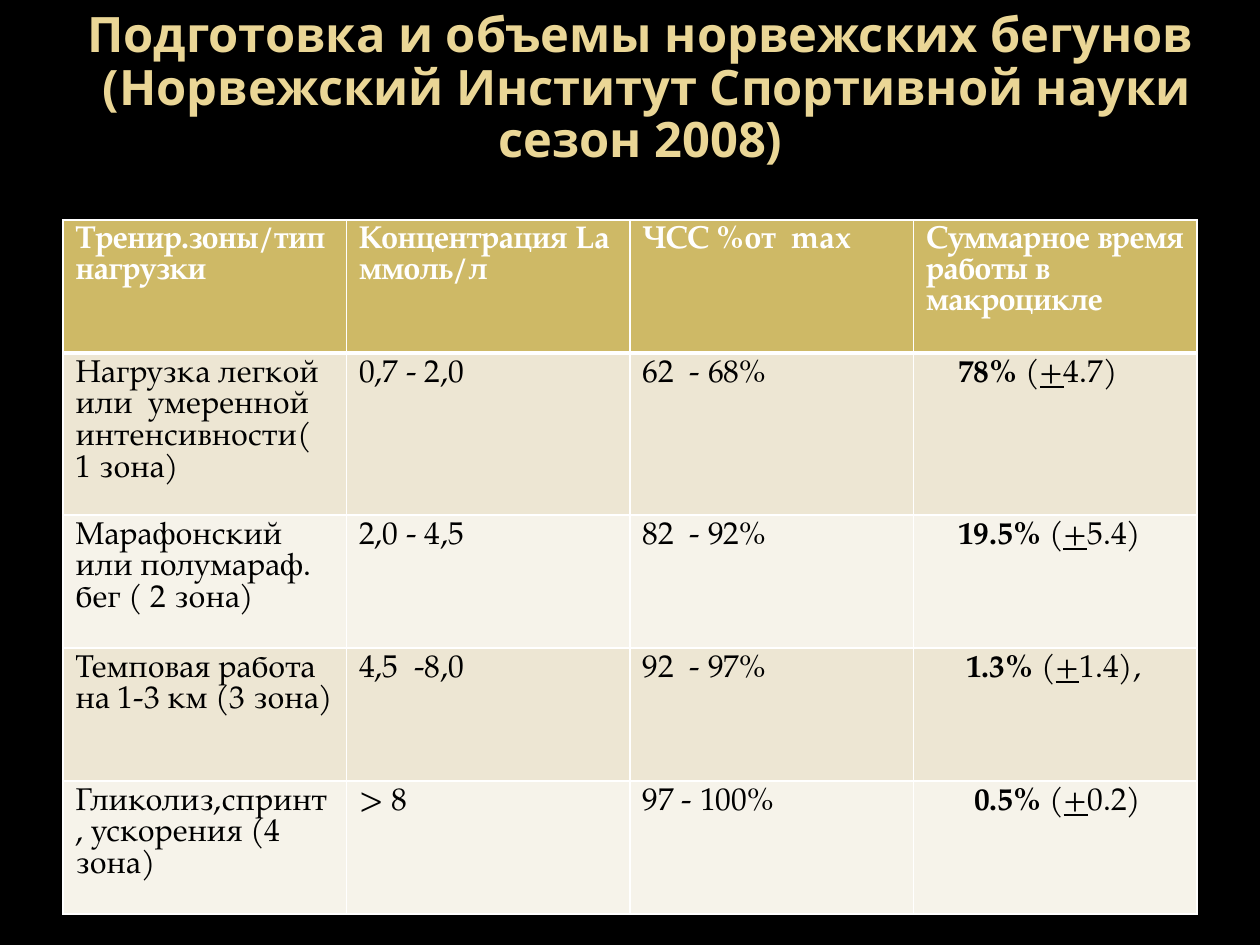
from lxml.etree import SubElement
from pptx import Presentation
from pptx.dml.color import RGBColor
from pptx.enum.text import MSO_ANCHOR, PP_ALIGN
from pptx.oxml.ns import qn
from pptx.util import Emu, Pt

EMU_PER_PX = 914400 / 126
TITLE = ("Подготовка и объемы норвежских бегунов\v"
         " (Норвежский Институт Спортивной науки сезон 2008)")
HEADINGS = ["Тренир.зоны/тип нагрузки", "Концентрация La ммоль/л", "ЧСС %от  max",
            "Суммарное время\nработы в  макроцикле"]
ZONES = [
    ("Нагрузка легкой или  умеренной интенсивности( 1 зона)", "0,7 - 2,0", "62  - 68%"),
    ("Марафонский или полумараф. бег ( 2 зона)", "2,0 - 4,5", "82  - 92%"),
    ("Темповая работа на 1-3 км (3 зона)", "4,5  -8,0", "92  - 97%"),
    ("Гликолиз,спринт, ускорения (4 зона)", "> 8", "97 - 100%"),
]
SHARES = [("78%", "4.7)", 32), ("19.5%", "5.4)", 32), ("1.3%", "1.4),", 40), ("0.5%", "0.2)", 48)]
ROW_HEIGHTS = [133, 162, 133, 133, 133]
BODY_FILLS = ["EDE6D3", "F6F3EA"]


def px(length):
    """Turn a length in px into EMU."""
    return Emu(round(length * EMU_PER_PX))


def color(value):
    """Turn a hex string into a colour."""
    return RGBColor.from_string(value)


def add_text(para, text, size=18, font="TeX Gyre Pagella", fill="000000", bold=False, underline=False):
    """Add formatted text to a paragraph, with \\v as a line break."""
    for index, line in enumerate(text.split("\v")):
        if index:
            para.add_line_break()
        span = para.add_run()
        span.text = line
        span.font.size = Pt(size)
        span.font.name = font
        span.font.bold = bold
        span.font.underline = underline
        span.font.color.rgb = color(fill)


def style_cell(cell, fill, bottom=1):
    """Fill a cell and give it white borders."""
    cell.fill.solid()
    cell.fill.fore_color.rgb = color(fill)
    properties = cell._tc.get_or_add_tcPr()
    widths = {"a:lnL": 1, "a:lnR": 1, "a:lnT": 1, "a:lnB": bottom}
    for index, (tag, width) in enumerate(widths.items()):
        border = SubElement(properties, qn(tag), w=str(Pt(width)))
        SubElement(SubElement(border, qn("a:solidFill")), qn("a:srgbClr"), val="FFFFFF")
        properties.insert(index, border)


def add_share(para, share, deviation, indent):
    """Write a bold share followed by its deviation, with an indent in px."""
    para._p.get_or_add_pPr().set("marL", str(px(indent)))
    add_text(para, share, bold=True)
    add_text(para, " (")
    add_text(para, "+", underline=True)
    add_text(para, deviation)


def place_title(page, left, top, width, height):
    """Place and format the slide title."""
    box = page.shapes.title
    box.left, box.top, box.width, box.height = map(px, (left, top, width, height))
    frame = box.text_frame
    frame.word_wrap = True
    frame.vertical_anchor = MSO_ANCHOR.MIDDLE
    para = frame.paragraphs[0]
    para.alignment = PP_ALIGN.CENTER
    para.line_spacing = 0.9
    add_text(para, TITLE, size=27.9, font="Noto Sans", fill="EAD696", bold=True)


def place_table(page, left, top, width):
    """Place the table of training zones."""
    columns = len(HEADINGS)
    table = page.shapes.add_table(len(ROW_HEIGHTS), columns, px(left), px(top),
                                  px(width), px(sum(ROW_HEIGHTS))).table
    for row, height in zip(table.rows, ROW_HEIGHTS):
        row.height = px(height)
    for column, heading in enumerate(HEADINGS):
        table.columns[column].width = px(width / columns)
        cell = table.cell(0, column)
        style_cell(cell, "CEB966", bottom=3)
        for index, line in enumerate(heading.split("\n")):
            frame = cell.text_frame
            para = frame.add_paragraph() if index else frame.paragraphs[0]
            add_text(para, line, fill="FFFFFF", bold=True)
    for row, (zone, share) in enumerate(zip(ZONES, SHARES), start=1):
        for column in range(columns):
            cell = table.cell(row, column)
            style_cell(cell, BODY_FILLS[(row - 1) % 2])
            para = cell.text_frame.paragraphs[0]
            if column < len(zone):
                add_text(para, zone[column])
            else:
                add_share(para, *share)


def main():
    """Build the deck and save it."""
    deck = Presentation()
    deck.slide_width, deck.slide_height = px(1260), px(945)
    page = deck.slides.add_slide(deck.slide_layouts[5])
    page.background.fill.solid()
    page.background.fill.fore_color.rgb = color("000000")
    place_title(page, 42, 0, 1197, 179)
    place_table(page, 63, 220, 1134)
    deck.save("out.pptx")


if __name__ == "__main__":
    main()
